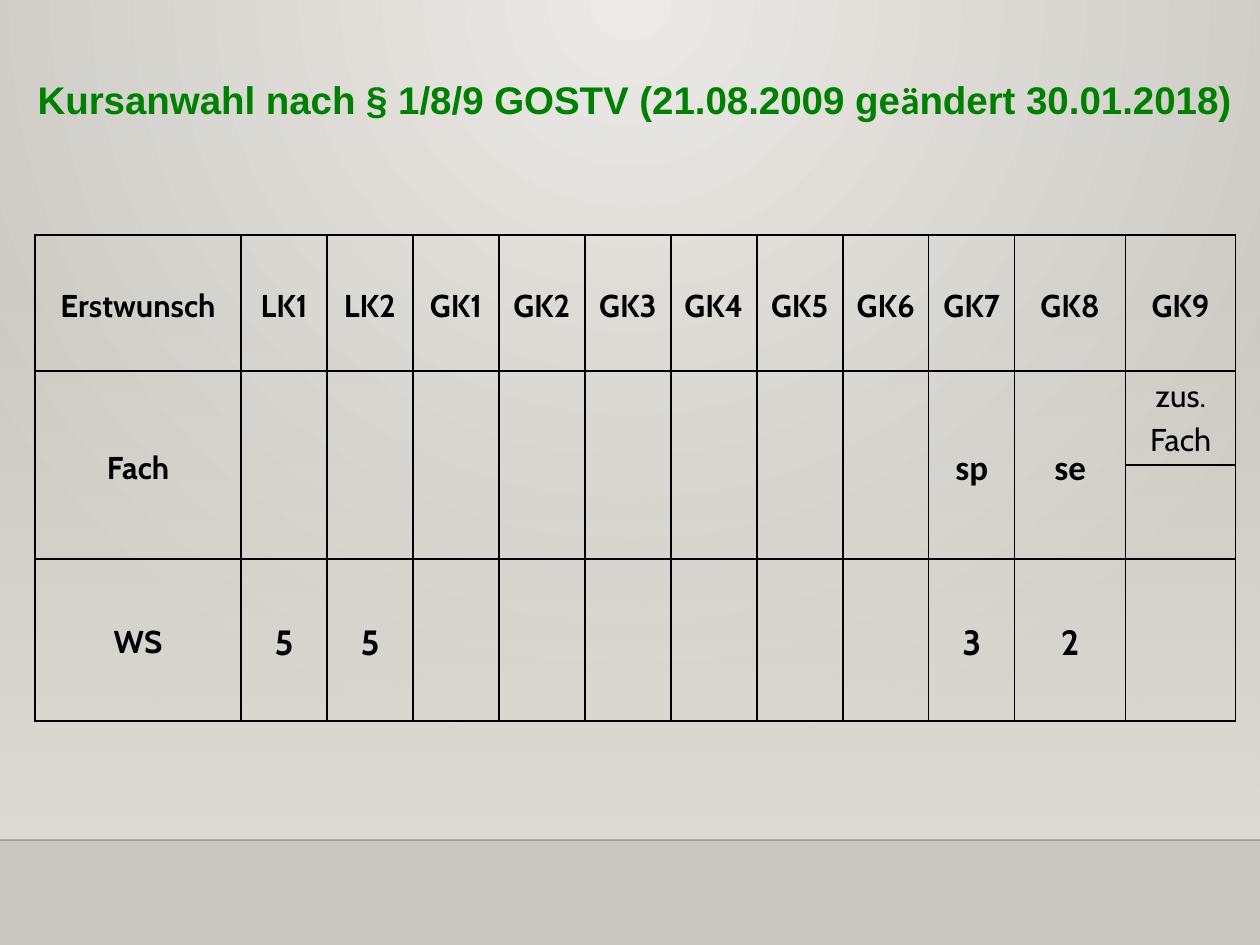
from lxml.etree import SubElement
from pptx import Presentation
from pptx.dml.color import RGBColor
from pptx.enum.shapes import MSO_CONNECTOR as Connector, MSO_SHAPE as Shape
from pptx.enum.text import MSO_ANCHOR as Anchor, MSO_AUTO_SIZE as AutoSize, PP_ALIGN as Align
from pptx.oxml.ns import qn
from pptx.util import Emu, Pt

COLORS = {
    "ink": "000000",
    "green": "008000",
    "rule": "000001",
    "glow": "ECEAE7",
    "floor": "CAC7C1",
    "band": "DFDBD5",
}
COLUMNS = [206] + [86] * 9 + [111, 110]
ROWS = [136, 94, 94, 162]
COURSES = ["LK1", "LK2"] + [f"GK{number}" for number in range(1, 10)]
HEADER = ["Erstwunsch"] + COURSES
SUBJECTS = {0: "Fach", 9: "sp", 10: "se", 11: "zus. Fach"}
HOURS = {0: "WS", 1: "5", 2: "5", 9: "3", 10: "2"}


def px(length):
    return Emu(round(length * 914400 / 126))


def rgb(name):
    return RGBColor.from_string(COLORS[name])


def add(parent, tag, **attributes):
    return SubElement(parent, qn(tag), {key: str(value) for key, value in attributes.items()})


def add_color(parent, name, alpha=100):
    color = add(parent, "a:srgbClr", val=COLORS[name])
    if alpha < 100:
        add(color, "a:alpha", val=alpha * 1000)


def set_stops(gradient, stops):
    """Replace all content of a gradient fill with (position, colour, alpha) stops."""
    for child in list(gradient):
        gradient.remove(child)
    stop_list = add(gradient, "a:gsLst")
    for position, name, alpha in stops:
        add_color(add(stop_list, "a:gs", pos=position * 1000), name, alpha)


class Slide:
    def __init__(self, deck):
        self.page = deck.slides.add_slide(deck.slide_layouts[5])
        self.shapes = self.page.shapes

    def background(self):
        self.page.background.fill.gradient()
        gradient = next(self.page.element.iter(qn("a:gradFill")))
        set_stops(gradient, [(0, "glow", 100), (100, "floor", 100)])
        focus = add(gradient, "a:path", path="circle")
        add(focus, "a:fillToRect", l=43000, t=0, r=43000, b=100000)

    def fading_band(self, left, top, width, height):
        band = self.shapes.add_shape(Shape.RECTANGLE, px(left), px(top), px(width), px(height))
        band.shadow.inherit = False
        band.line.fill.background()
        band.fill.gradient()
        gradient = next(band.element.iter(qn("a:gradFill")))
        set_stops(gradient, [(0, "band", 0), (100, "band", 100)])
        add(gradient, "a:lin", ang=5400000, scaled=0)

    def rule(self, left, top, width):
        line = self.shapes.add_connector(
            Connector.STRAIGHT, px(left), px(top), px(left + width), px(top))
        line.line.width = Pt(1)
        line.line.color.rgb = rgb("rule")
        add(next(line.element.iter(qn("a:srgbClr"))), "a:alpha", val=20000)
        add(line.element.spPr, "a:effectLst")

    def title(self, spans, left, top, width, height):
        box = self.shapes.title
        box.left, box.top, box.width, box.height = map(px, (left, top, width, height))
        frame = box.text_frame
        frame.auto_size = AutoSize.NONE
        frame.word_wrap = True
        frame.vertical_anchor = Anchor.TOP
        para = frame.paragraphs[0]
        para.alignment = Align.LEFT
        for text, font in spans:
            span = para.add_run()
            span.text = text
            self.style(span, font, 22, True, "green")

    def style(self, span, font, size, bold, color="ink"):
        span.font.name = font
        span.font.size = Pt(size)
        span.font.bold = bold
        span.font.color.rgb = rgb(color)

    def table(self, left, top):
        table = self.shapes.add_table(
            len(ROWS), len(COLUMNS), px(left), px(top), px(sum(COLUMNS)), px(sum(ROWS))).table
        table.first_row = table.horz_banding = False
        for column, width in zip(table.columns, COLUMNS):
            column.width = px(width)
        for row, height in zip(table.rows, ROWS):
            row.height = px(height)
        for cell in table.iter_cells():
            self.cell_frame(cell)
        for column in range(len(COLUMNS) - 1):
            table.cell(1, column).merge(table.cell(2, column))
        return table

    def cell_frame(self, cell):
        cell.margin_left = cell.margin_right = px(8)
        cell.margin_top = cell.margin_bottom = 0
        cell.vertical_anchor = Anchor.MIDDLE
        properties = cell._tc.get_or_add_tcPr()
        for side in ("a:lnL", "a:lnR", "a:lnT", "a:lnB"):
            border = add(properties, side, w=Pt(1))
            add_color(add(border, "a:solidFill"), "ink")
        cell.fill.background()

    def cell_text(self, cell, text, font="Cabin", size=18, bold=True):
        cell.text_frame.text = text
        para = cell.text_frame.paragraphs[0]
        para.alignment = Align.CENTER
        para.line_spacing = 1.15
        self.style(para.runs[0], font, size, bold)


def main():
    deck = Presentation()
    deck.slide_width, deck.slide_height = px(1260), px(945)
    slide = Slide(deck)
    slide.background()
    slide.fading_band(0, 278, 1260, 562)
    slide.rule(0, 840, 1260)

    table = slide.table(35, 235)
    for column, text in enumerate(HEADER):
        slide.cell_text(table.cell(0, column), text)
    for column, text in SUBJECTS.items():
        cell = table.cell(1, column)
        if column in (9, 10):
            slide.cell_text(cell, text, font="Calibri", size=20)
        else:
            slide.cell_text(cell, text, bold=column == 0)
    table.cell(1, 11).vertical_anchor = Anchor.TOP
    for column, text in HOURS.items():
        slide.cell_text(table.cell(3, column), text, size=20 if column else 18)

    slide.title([
        ("Kursanwahl nach § 1/8/9 GOSTV (21.08.2009 ge", "Arial"),
        ("ä", "Calibri"),
        ("ndert 30.01.2018)", "Arial"),
    ], 25, 70, 1334, 106)
    deck.save("out.pptx")


if __name__ == "__main__":
    main()
